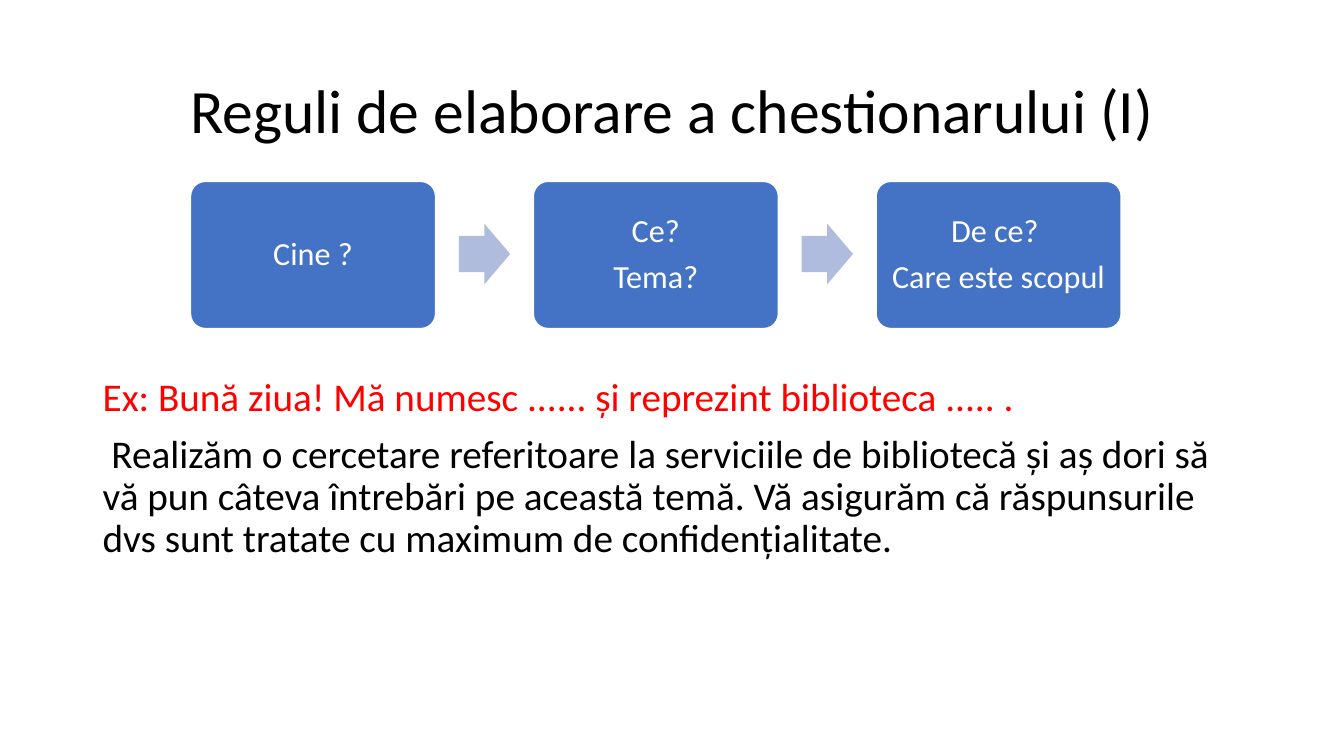
from pptx import Presentation
from pptx.dml.color import RGBColor
from pptx.enum.shapes import MSO_SHAPE as SHAPE
from pptx.enum.text import MSO_ANCHOR as ANCHOR, PP_ALIGN as ALIGN
from pptx.util import Inches, Pt

COLORS = {"text": "000000", "example": "FF0000", "step": "4472C4",
          "arrow": "B0BCDE", "white": "FFFFFF"}


class SlideBuilder:
    font = "Calibri"
    line_spacing = 0.9

    def __init__(self, slide):
        self.shapes = slide.shapes

    def color(self, name):
        return RGBColor.from_string(COLORS[name])

    def fill_text(self, tf, lines, size, gap=0, align=ALIGN.LEFT,
                  anchor=ANCHOR.MIDDLE, inset=(0.1, 0.05)):
        tf.word_wrap = True
        tf.vertical_anchor = anchor
        tf.margin_left = tf.margin_right = Inches(inset[0])
        tf.margin_top = tf.margin_bottom = Inches(inset[1])
        tf.text = "\n".join(text for text, _ in lines)
        for i, (p, (_, color)) in enumerate(zip(tf.paragraphs, lines)):
            p.alignment = align
            p.line_spacing = self.line_spacing
            p.space_before = Pt(gap if i else 0)
            for r in p.runs:
                r.font.name = self.font
                r.font.size = Pt(size)
                r.font.color.rgb = self.color(color)

    def text(self, box, lines, size, **style):
        sp = self.shapes.add_textbox(*map(Inches, box))
        self.fill_text(sp.text_frame, lines, size, **style)

    def shape(self, kind, box, fill, adjustments):
        sp = self.shapes.add_shape(kind, *map(Inches, box))
        sp.shadow.inherit = False
        sp.fill.solid()
        sp.fill.fore_color.rgb = self.color(fill)
        sp.line.fill.background()
        for i, value in enumerate(adjustments):
            sp.adjustments[i] = value
        return sp

    def step(self, box, lines):
        sp = self.shape(SHAPE.ROUNDED_RECTANGLE, box, "step", [0.1])
        sp.line.color.rgb = self.color("white")
        sp.line.width = Pt(1)
        self.fill_text(sp.text_frame, [(text, "white") for text in lines], 23,
                       gap=8, align=ALIGN.CENTER, inset=(0.1, 0.14))

    def arrow(self, box):
        self.shape(SHAPE.RIGHT_ARROW, box, "arrow", [0.6, 0.5])


def main():
    prs = Presentation()
    prs.slide_width, prs.slide_height = Inches(13.33), Inches(7.5)
    s = SlideBuilder(prs.slides.add_slide(prs.slide_layouts[6]))

    s.text((0.92, 0.4, 11.5, 1.45),
           [("Reguli de elaborare a chestionarului (I)", "text")],
           44, align=ALIGN.CENTER)
    s.text((0.92, 3.7, 11.5, 3.06), [
        ("Ex: Bună ziua! Mă numesc ...... și reprezint biblioteca ..... .",
         "example"),
        (" Realizăm o cercetare referitoare la serviciile de bibliotecă și "
         "aș dori să vă pun câteva întrebări pe această temă. Vă asigurăm că "
         "răspunsurile dvs sunt tratate cu maximum de confidențialitate.",
         "text"),
    ], 28, gap=10, anchor=ANCHOR.TOP)

    steps = [["Cine ?"], ["Ce?", "Tema?"], ["De ce? ", "Care este scopul"]]
    left, pitch = 1.89, 3.4
    for i, lines in enumerate(steps):
        x = left + i * pitch
        s.step((x, 1.8, 2.43, 1.46), lines)
        if i < len(steps) - 1:
            s.arrow((x + 2.66, 2.22, 0.51, 0.6))

    prs.save("out.pptx")


if __name__ == "__main__":
    main()
